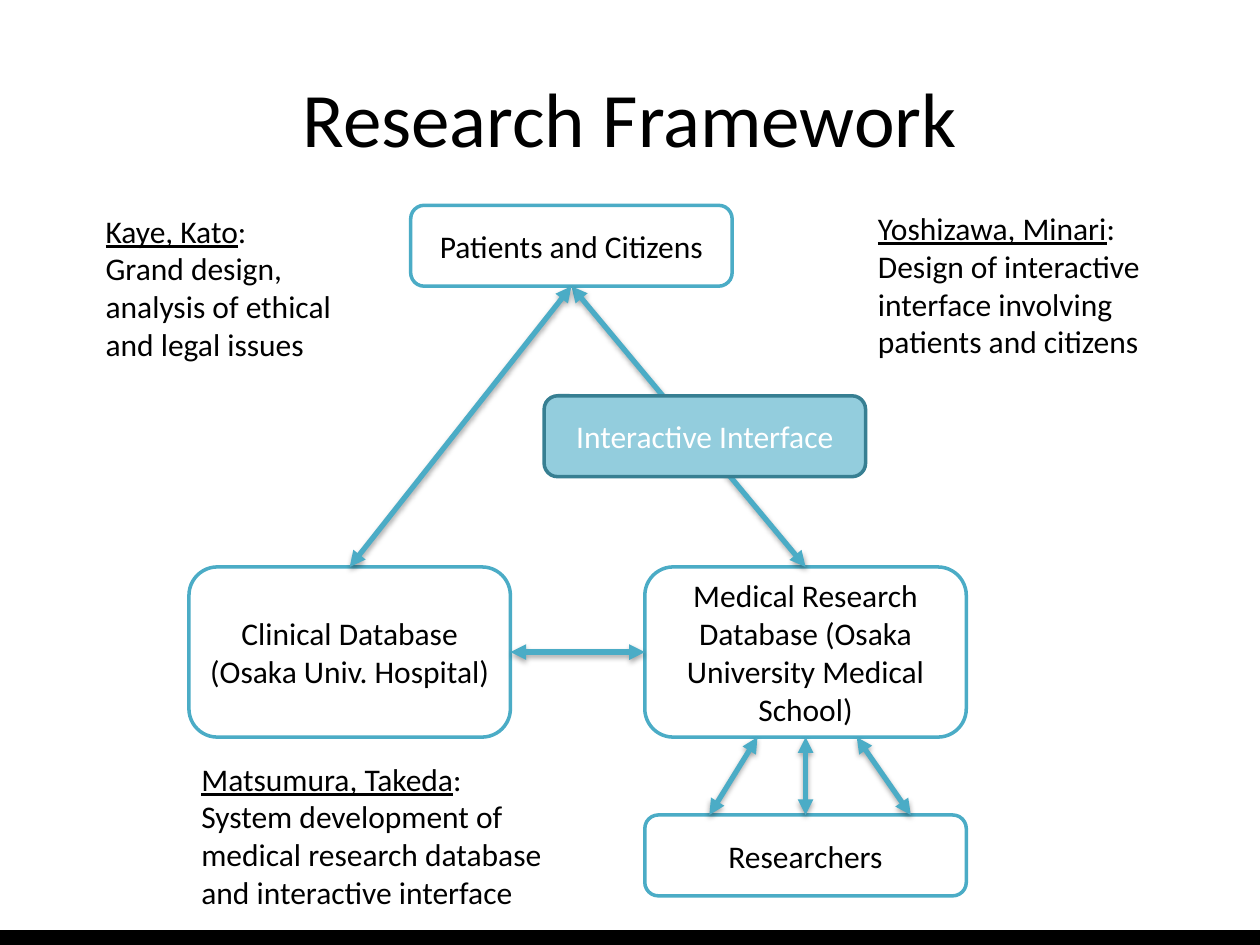
from dataclasses import dataclass

import lxml.etree
import pptx
import pptx.dml.color
import pptx.enum.shapes
import pptx.enum.text
import pptx.oxml.ns
import pptx.util

Cm = pptx.util.Cm
Pt = pptx.util.Pt
qn = pptx.oxml.ns.qn
Kind = pptx.enum.shapes.MSO_SHAPE
Link = pptx.enum.shapes.MSO_CONNECTOR
Align = pptx.enum.text.PP_ALIGN
Anchor = pptx.enum.text.MSO_ANCHOR
Fit = pptx.enum.text.MSO_AUTO_SIZE
TOP, LEFT, BOTTOM, RIGHT = range(4)


@dataclass(frozen=True)
class Theme:
    font: str = "Calibri"
    title: int = 44
    body: int = 18
    ink: str = "000000"
    paper: str = "FFFFFF"
    teal: str = "4BACC6"
    light: str = "93CDDD"
    dark: str = "377F92"
    edge: int = 2
    arrow: int = 3


@dataclass(frozen=True)
class Box:
    text: str
    x: float
    y: float
    h: float = 1.63
    w: float = 6.48
    fill: str = Theme.paper
    line: str = Theme.teal
    ink: str = Theme.ink


@dataclass(frozen=True)
class Note:
    names: str
    task: str
    x: float
    y: float
    w: float = 6.12
    h: float = 3.33


THEME = Theme()

# Boxes, notes and loose arrows, in centimetres
PEOPLE = Box("Patients and Citizens", 8.28, 4.14)
CLINIC = Box("Clinical Database\n(Osaka Univ. Hospital)", 3.81, 11.43, 3.43)
SCHOOL = Box("Medical Research Database (Osaka University Medical School)",
             13, 11.43, 3.43)
USERS = Box("Researchers", 13, 16.43)
PORTAL = Box("Interactive Interface", 10.97, 7.98, fill=THEME.light,
             line=THEME.dark, ink=THEME.paper)
NOTES = (
    Note("Kaye, Kato", "Grand design, analysis of ethical and legal issues",
         1.88, 4.14),
    Note("Yoshizawa, Minari",
         "Design of interactive interface involving patients and citizens",
         17.45, 4.09),
    Note("Matsumura, Takeda",
         "System development of medical research database "
         "and interactive interface", 3.81, 15.19, 8.2),
)
SLANTS = ((15.27, 14.3), (17.27, 18.36))


def color(code: str) -> pptx.dml.color.RGBColor:
    return pptx.dml.color.RGBColor.from_string(code)


def style(frame, size: int, ink: str, align=Align.LEFT) -> None:
    for para in frame.paragraphs:
        para.alignment = align
        for run in para.runs:
            run.font.name = THEME.font
            run.font.size = Pt(size)
            run.font.color.rgb = color(ink)


def add_title(slide, text: str) -> None:
    area = slide.shapes.add_textbox(Cm(1.27), Cm(0.76), Cm(22.86), Cm(3.18))
    frame = area.text_frame
    frame.word_wrap = True
    frame.vertical_anchor = Anchor.MIDDLE
    frame.text = text
    style(frame, THEME.title, THEME.ink, Align.CENTER)


def add_bar(slide) -> None:
    bar = slide.shapes.add_shape(Kind.RECTANGLE, 0, Cm(18.75),
                                 Cm(25.4), Cm(0.3))
    bar.shadow.inherit = False
    bar.fill.solid()
    bar.fill.fore_color.rgb = color(THEME.ink)
    bar.line.fill.background()


def add_box(slide, box: Box):
    shape = slide.shapes.add_shape(Kind.ROUNDED_RECTANGLE, Cm(box.x),
                                   Cm(box.y), Cm(box.w), Cm(box.h))
    shape.shadow.inherit = False
    shape.fill.solid()
    shape.fill.fore_color.rgb = color(box.fill)
    shape.line.color.rgb = color(box.line)
    shape.line.width = Pt(THEME.edge)
    frame = shape.text_frame
    frame.word_wrap = True
    frame.vertical_anchor = Anchor.MIDDLE
    frame.text = box.text
    style(frame, THEME.body, box.ink, Align.CENTER)
    return shape


def add_arrow(slide, x1: float = 0, y1: float = 0,
              x2: float = 0, y2: float = 0):
    arrow = slide.shapes.add_connector(Link.STRAIGHT, Cm(x1), Cm(y1),
                                       Cm(x2), Cm(y2))
    arrow.line.color.rgb = color(THEME.teal)
    arrow.line.width = Pt(THEME.arrow)
    props = arrow.element.spPr
    sub = lxml.etree.SubElement
    for end in ("a:headEnd", "a:tailEnd"):
        sub(props.find(qn("a:ln")), qn(end), type="triangle")
    # Soft shadow straight below the line
    shade = sub(sub(props, qn("a:effectLst")), qn("a:outerShdw"),
                blurRad=str(Pt(3.1)), dist=str(Pt(1.8)),
                dir="5400000", rotWithShape="0")
    tint = sub(shade, qn("a:srgbClr"), val=THEME.ink)
    sub(tint, qn("a:alpha"), val="35000")
    return arrow


def join(slide, start, side: int, end, face: int) -> None:
    arrow = add_arrow(slide)
    arrow.begin_connect(start, side)
    arrow.end_connect(end, face)


def add_note(slide, note: Note) -> None:
    area = slide.shapes.add_textbox(Cm(note.x), Cm(note.y),
                                    Cm(note.w), Cm(note.h))
    frame = area.text_frame
    frame.word_wrap = True
    frame.auto_size = Fit.SHAPE_TO_FIT_TEXT
    frame.text = f"{note.names}\n{note.task}"
    head = frame.paragraphs[0]
    head.runs[0].font.underline = True
    head.add_run().text = ":"
    style(frame, THEME.body, THEME.ink)


def main() -> None:
    deck = pptx.Presentation()
    deck.slide_width, deck.slide_height = Cm(25.4), Cm(19.05)
    slide = deck.slides.add_slide(deck.slide_layouts[6])
    add_bar(slide)
    add_title(slide, "Research Framework")

    # Framework: the interface covers the arrow it sits on
    people, clinic, school, users = (
        add_box(slide, box) for box in (PEOPLE, CLINIC, SCHOOL, USERS))
    join(slide, people, BOTTOM, school, TOP)
    add_box(slide, PORTAL)
    join(slide, people, BOTTOM, clinic, TOP)
    join(slide, school, LEFT, clinic, RIGHT)
    join(slide, school, BOTTOM, users, TOP)
    for x1, x2 in SLANTS:
        add_arrow(slide, x1, SCHOOL.y + SCHOOL.h, x2, USERS.y)

    # Who does what
    for note in NOTES:
        add_note(slide, note)
    deck.save("out.pptx")


if __name__ == "__main__":
    main()
